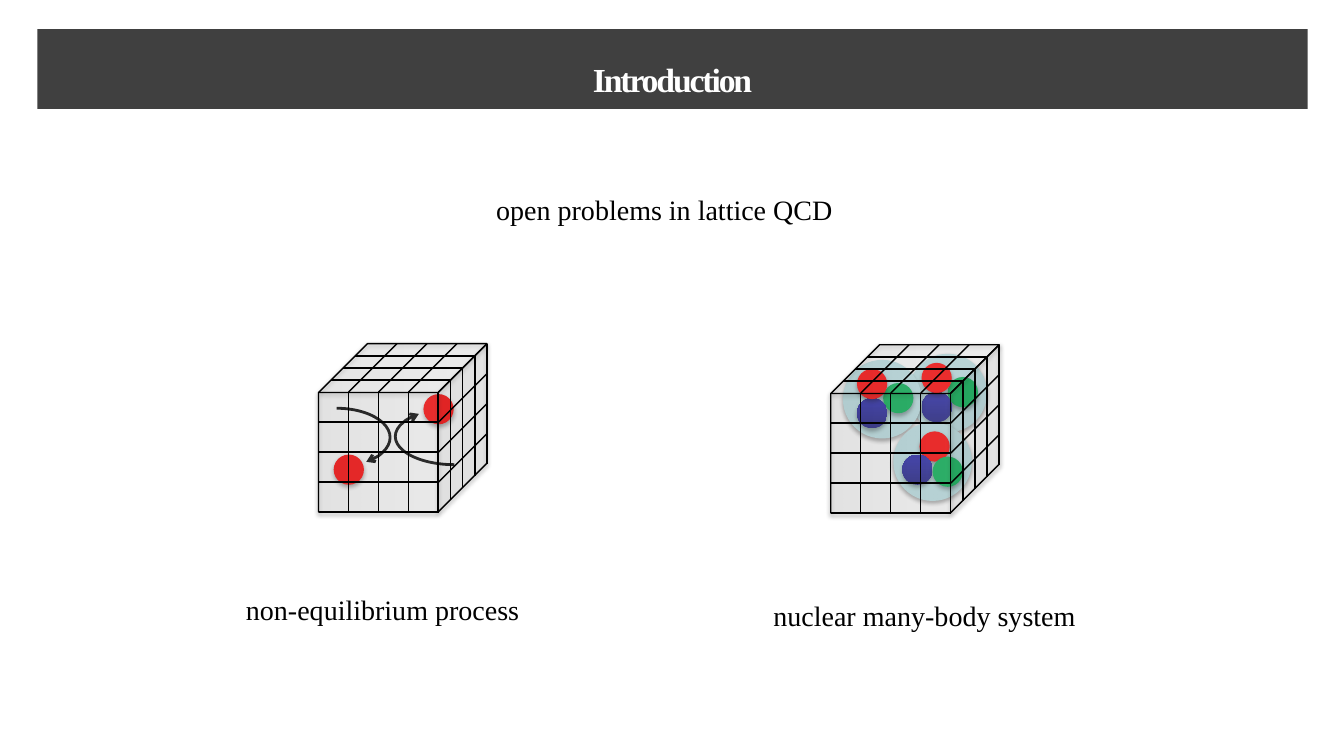
from dataclasses import dataclass

from lxml import etree
from pptx import Presentation
from pptx.dml.color import RGBColor
from pptx.enum.shapes import MSO_CONNECTOR, MSO_SHAPE
from pptx.enum.text import MSO_ANCHOR, PP_ALIGN
from pptx.oxml import parse_xml
from pptx.oxml.ns import nsdecls, qn
from pptx.util import Inches, Pt


@dataclass
class Theme:
    font: str = "Times New Roman"
    title_size: int = 24
    body_size: int = 20
    banner: str = "404040"
    white: str = "FFFFFF"
    black: str = "000000"
    # Fills are lists of (position %, colour, opacity %)
    red: tuple = ((0, "FF0000", 100), (100, "FF0000", 100))
    green: tuple = ((0, "00B050", 100), (100, "00B050", 100))
    blue: tuple = ((0, "1B1B7E", 100), (80, "2323A3", 100), (100, "2020A6", 100))
    nucleon: tuple = ((0, "BBE0E3", 100), (100, "BBE0E3", 100))
    glass: tuple = ((0, "BDBDBD", 20), (35, "D1D1D1", 20), (100, "EEEEEE", 20))


theme = Theme()


def write_text(sp, text, size=theme.body_size, color=theme.black, bold=False,
               align=PP_ALIGN.CENTER, spacing=1.0, anchor=MSO_ANCHOR.TOP):
    tf = sp.text_frame
    tf.word_wrap = True
    tf.vertical_anchor = anchor
    p = tf.paragraphs[0]
    p.alignment = align
    p.line_spacing = spacing
    r = p.add_run()
    r.text = text
    r.font.name = theme.font
    r.font.size = Pt(size)
    r.font.bold = bold
    r.font.color.rgb = RGBColor.from_string(color)
    return r


def add_solid(shapes, kind, x, y, w, h, stops, angle=270, opacity=35, dist=1.8):
    """Add a shape with a fill, no outline and a soft shadow below it."""
    sp = shapes.add_shape(kind, Inches(x), Inches(y), Inches(w), Inches(h))
    sp.line.fill.background()
    if stops[0][1] == stops[-1][1]:
        sp.fill.solid()
        sp.fill.fore_color.rgb = RGBColor.from_string(stops[0][1])
    else:
        sp.fill.gradient()
        grad = sp._element.spPr.find(qn("a:gradFill"))
        gs = "".join(f'<a:gs pos="{pos * 1000}"><a:srgbClr val="{c}">'
                     f'<a:alpha val="{a * 1000}"/></a:srgbClr></a:gs>' for pos, c, a in stops)
        grad.getparent().replace(grad, parse_xml(
            f'<a:gradFill {nsdecls("a")} rotWithShape="1"><a:gsLst>{gs}</a:gsLst>'
            f'<a:lin ang="{angle * 60000}" scaled="0"/></a:gradFill>'))
    sp._element.spPr.append(parse_xml(
        f'<a:effectLst {nsdecls("a")}><a:outerShdw blurRad="{Pt(3.1)}" dist="{Pt(dist)}" '
        f'dir="5400000" rotWithShape="0"><a:srgbClr val="{theme.black}">'
        f'<a:alpha val="{opacity * 1000}"/></a:srgbClr></a:outerShdw></a:effectLst>'))
    return sp


prs = Presentation()
prs.slide_width, prs.slide_height = Inches(13.33), Inches(7.5)
s = prs.slides.add_slide(prs.slide_layouts[5])

# Title banner
title = s.shapes.title
title.left, title.top, title.width, title.height = map(Inches, (0.37, 0.29, 12.6, 0.79))
title.fill.solid()
title.fill.fore_color.rgb = RGBColor.from_string(theme.banner)
r = write_text(title, "Introduction", size=theme.title_size, color=theme.white,
               bold=True, spacing=1.5, anchor=MSO_ANCHOR.MIDDLE)
r.font._element.set("spc", "-150")

# Heading and captions
for text, box, fmt in [
    ("open problems in lattice QCD", (4.7, 1.86, 3.78, 0.46), {}),
    ("nuclear many-body system", (7.13, 5.72, 4.08, 0.54), {"spacing": 1.5}),
    ("non-equilibrium process", (2.34, 5.83, 3.31, 0.44), {"align": PP_ALIGN.LEFT}),
]:
    write_text(s.shapes.add_textbox(*map(Inches, box)), text, **fmt)

# Nucleons with their quarks, from back to front
nuclear = s.shapes.add_group_shape().shapes
big, small = 0.78, 0.3
for x, y, d, stops in [
    (9.01, 3.51, big, theme.nucleon), (9.4, 3.74, small, theme.green),
    (9.14, 3.89, small, theme.blue), (9.14, 3.6, small, theme.red),
    (8.36, 3.57, big, theme.nucleon), (8.86, 4.19, big, theme.nucleon),
    (9.12, 4.28, small, theme.red), (8.76, 3.8, small, theme.green),
    (8.95, 4.51, small, theme.blue), (9.25, 4.53, small, theme.green),
    (8.5, 3.95, small, theme.blue), (8.5, 3.66, small, theme.red),
]:
    add_solid(nuclear, MSO_SHAPE.OVAL, x, y, d, d, stops)

# Two moving particles, each with its curved arrow
process = s.shapes.add_group_shape().shapes
for ball, box, end, turn in [
    ((3.31, 4.51), (2.81, 4.05, 1.06, 0.58), 23.651, 0),
    ((4.2, 3.91), (3.92, 4.05, 1.17, 0.56), 19.5, 180),
]:
    add_solid(process, MSO_SHAPE.OVAL, *ball, small, small, theme.red)
    arc = process.add_shape(MSO_SHAPE.ARC, *map(Inches, box))
    arc.adjustments[0], arc.adjustments[1] = 162, end
    arc.rotation = turn
    arc.shadow.inherit = False
    arc.fill.background()
    arc.line.color.rgb = RGBColor.from_string(theme.black)
    arc.line.width = Pt(2)
    etree.SubElement(arc.line._get_or_add_ln(), qn("a:tailEnd"), type="arrow")

# Lattice cubes: a glass body under a 4 x 4 grid on each visible face
face, depth, n = 1.19, 0.48, 4
side = face + depth
for shapes, x, y in [(nuclear, 8.24, 3.42), (process, 3.16, 3.41)]:
    cube = add_solid(shapes, MSO_SHAPE.CUBE, x, y, side, side, theme.glass,
                     angle=0, opacity=38, dist=1.6)
    cube.adjustments[0] = 0.29
    cube.line.color.rgb = RGBColor.from_string(theme.black)
    cube.line.width = Pt(1)

    grid = []
    for i in range(n):
        a, b = i * face / n, i * depth / n
        grid += [
            (a, depth, a, side),                            # front, upright
            (face, side - a, 0, side - a),                  # front, level
            (side, a, face, depth + a),                     # right, receding
            (side - b, b, side - b, face + b),              # right, upright
            (side - b, b, depth - b, b),                    # top, level
        ]
        if i:
            grid.append((depth + a, 0, a, depth))           # top, receding
    for x1, y1, x2, y2 in grid:
        c = shapes.add_connector(MSO_CONNECTOR.STRAIGHT, Inches(x + x1), Inches(y + y1),
                                 Inches(x + x2), Inches(y + y2))
        c.line.color.rgb = RGBColor.from_string(theme.black)
        c.line.width = Pt(1)
        etree.SubElement(c._element.spPr, qn("a:effectLst"))

prs.save("out.pptx")
